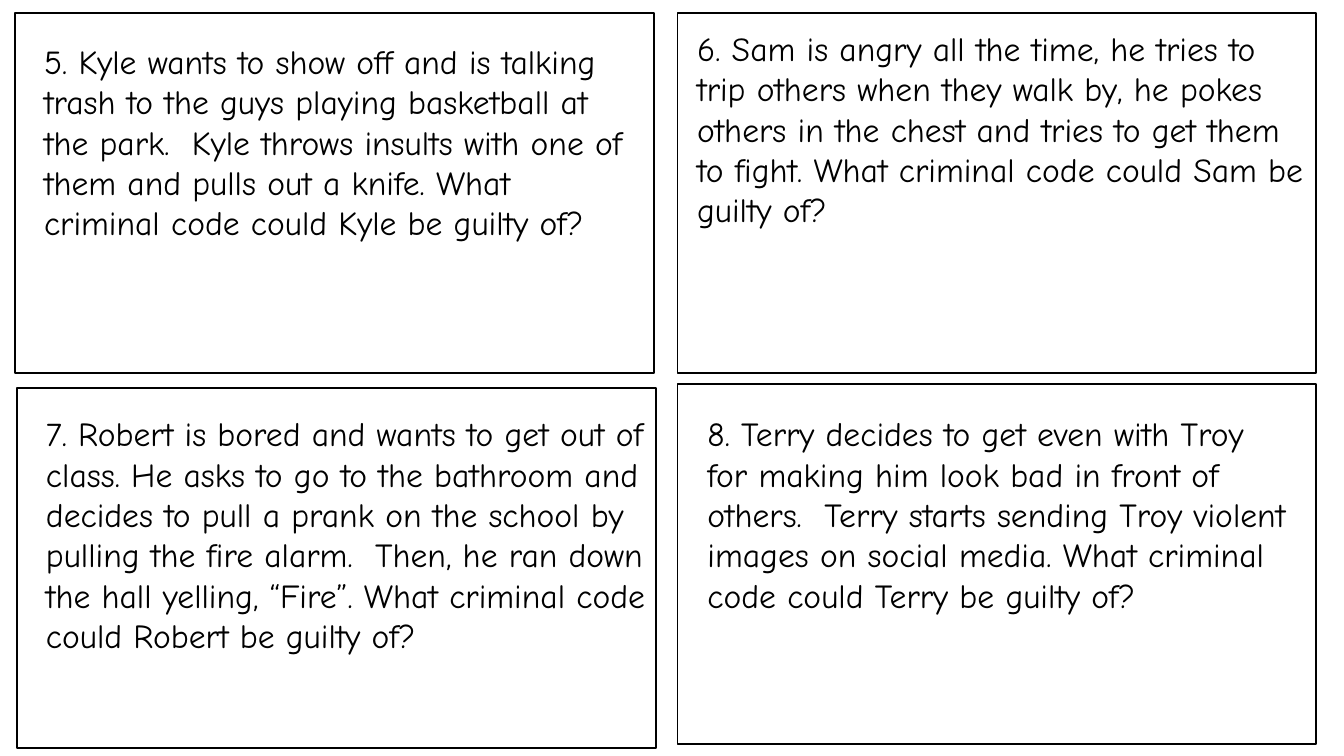
"""Build a slide of four scenario cards about criminal codes."""
from pptx import Presentation
from pptx.dml.color import RGBColor
from pptx.enum.shapes import MSO_SHAPE as SHAPE
from pptx.enum.text import MSO_ANCHOR as ANCHOR, MSO_AUTO_SIZE as AUTO
from pptx.util import Cm, Pt

COLORS = {"ink": "000000", "card": "FFFFFF"}
FONT = "Comic Neue"
CARD_W, CARD_H = 16.1, 9.07

SCENARIOS = [
    {"card": (0.38, 0.33), "box": (0.86, 0.91, 15.14, 6.4),
     "text": "5. Kyle wants to show off and is talking trash to the guys playing "
             "basketball at the park.  Kyle throws insults with one of them and "
             "pulls out a knife. What criminal code could Kyle be guilty of?"},
    {"card": (17.07, 0.33), "box": (17.32, 0.58, 15.85, 5.38),
     "text": "6. Sam is angry all the time, he tries to trip others when they walk "
             "by, he pokes others in the chest and tries to get them to fight. "
             "What criminal code could Sam be guilty of?"},
    {"card": (0.43, 9.78), "box": (0.91, 10.29, 15.62, 8.46),
     "text": "7. Robert is bored and wants to get out of class. He asks to go to "
             "the bathroom and decides to pull a prank on the school by pulling "
             "the fire alarm.  Then, he ran down the hall yelling, “Fire”. What "
             "criminal code could Robert be guilty of?"},
    {"card": (17.07, 9.68), "box": (17.58, 10.29, 15.11, 7.26),
     "text": "8. Terry decides to get even with Troy for making him look bad in "
             "front of others.  Terry starts sending Troy violent images on "
             "social media. What criminal code could Terry be guilty of?"},
]


def rgb(name):
    """Return the named colour."""
    return RGBColor.from_string(COLORS[name])


def add_card(s, x, y):
    """Draw one outlined card."""
    sp = s.shapes.add_shape(SHAPE.RECTANGLE, Cm(x), Cm(y), Cm(CARD_W), Cm(CARD_H))
    sp.shadow.inherit = False
    sp.fill.solid()
    sp.fill.fore_color.rgb = rgb("card")
    sp.line.color.rgb = rgb("ink")
    sp.line.width = Pt(1)


def add_text(s, text, box, size=24, color="ink", font=FONT):
    """Add a wrapped text box that grows with its text."""
    tf = s.shapes.add_textbox(*map(Cm, box)).text_frame
    tf.word_wrap = True
    tf.auto_size = AUTO.SHAPE_TO_FIT_TEXT
    tf.vertical_anchor = ANCHOR.TOP
    r = tf.paragraphs[0].add_run()
    r.text = text
    r.font.name = font
    r.font.size = Pt(size)
    r.font.color.rgb = rgb(color)


def main():
    """Build and save the slide."""
    prs = Presentation()
    prs.slide_width, prs.slide_height = Cm(33.87), Cm(19.05)
    s = prs.slides.add_slide(prs.slide_layouts[6])
    for scenario in SCENARIOS:
        add_card(s, *scenario["card"])
        add_text(s, scenario["text"], scenario["box"])
    prs.save("out.pptx")


if __name__ == "__main__":
    main()
